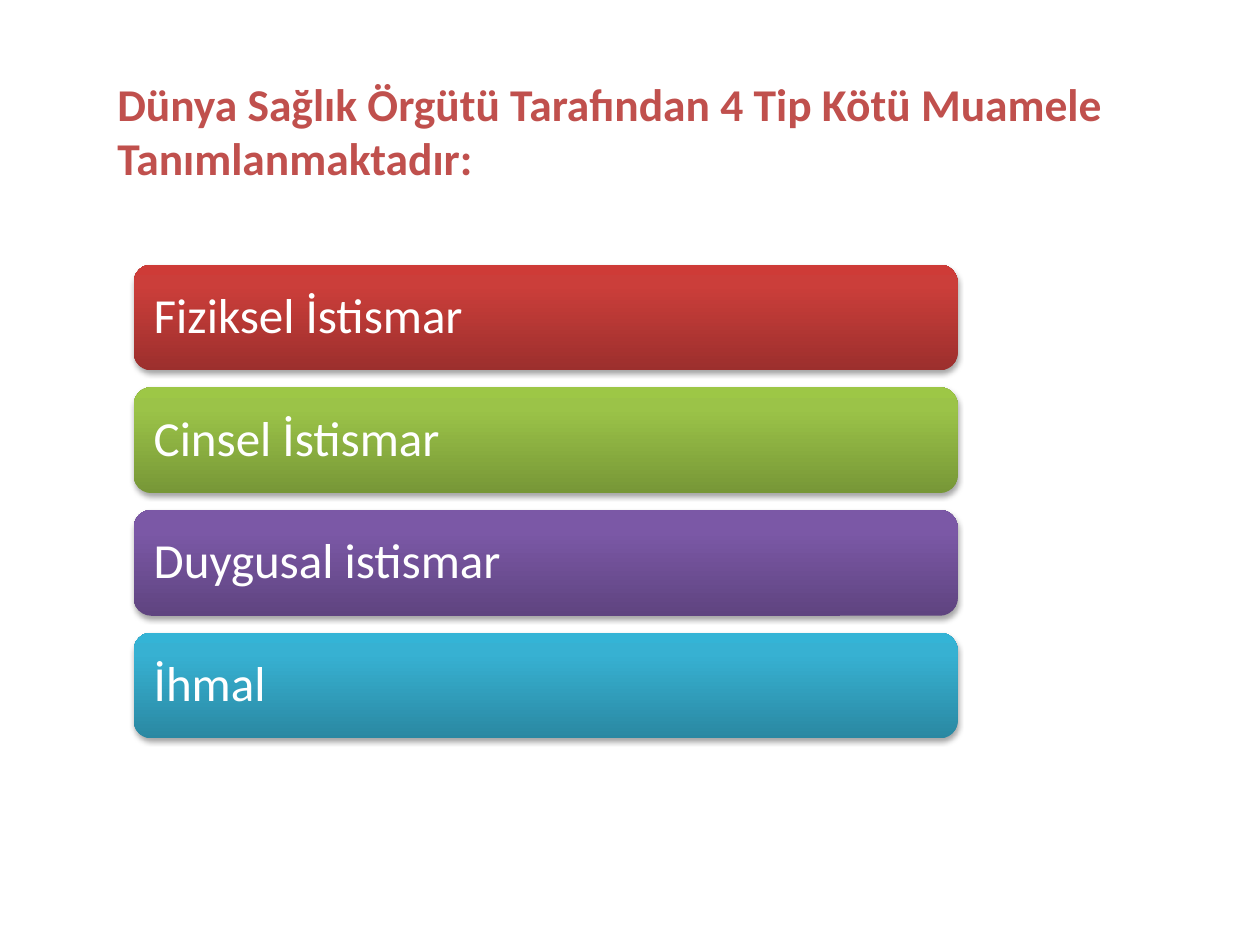
from lxml import etree
from pptx import Presentation
from pptx.dml.color import RGBColor
from pptx.enum.shapes import MSO_SHAPE
from pptx.enum.text import MSO_ANCHOR, PP_ALIGN
from pptx.oxml.ns import qn
from pptx.util import Pt

ROUNDED = MSO_SHAPE.ROUNDED_RECTANGLE
LEFT, MIDDLE = PP_ALIGN.LEFT, MSO_ANCHOR.MIDDLE

# Content: bar label and its gradient from bottom to top
TITLE = "Dünya Sağlık Örgütü Tarafından 4 Tip Kötü Muamele Tanımlanmaktadır:"
TYPES = [
    ("Fiziksel İstismar", ("9C2F2D", "CB3E3A", "CE3B37")),
    ("Cinsel İstismar", ("779737", "9BC348", "9DC746")),
    ("Duygusal istismar", ("5F4480", "7B58A6", "7C57A8")),
    ("İhmal", ("2A88A2", "37B1D2", "34B4D6")),
]

THEME = {
    "font": "Calibri", "title": "C0504D", "label": "FFFFFF", "shadow": "000000",
    "title_size": 26, "label_size": 28, "stops": (0, 80, 100),
}

# Layout in points
TITLE_BOX = (59.8, 43.2, 591.8, 62.6)
BAR_LEFT, BAR_TOP, BAR_W, BAR_H = 76.4, 151.2, 470.8, 60.5
BAR_PITCH, BAR_INSET = 70.1, 8.5


def add_color(parent, color):
    clr = etree.SubElement(parent, qn("a:srgbClr"), val=color)
    return clr


def write(tf, text, size, color, bold=False):
    tf.word_wrap = True
    tf.vertical_anchor = MIDDLE
    p = tf.paragraphs[0]
    p.alignment = LEFT
    r = p.add_run()
    r.text = text
    r.font.name, r.font.size, r.font.bold = THEME["font"], Pt(size), bold
    r.font.color.rgb = RGBColor.from_string(color)
    return p


def fill_gradient(sp, colors):
    sp.fill.gradient()
    sp.fill.gradient_angle = 90
    stops = sp.element.spPr.find(".//" + qn("a:gsLst"))
    stops.clear()
    for pos, color in zip(THEME["stops"], colors):
        add_color(etree.SubElement(stops, qn("a:gs"), pos=str(pos * 1000)), color)


def drop_shadow(sp):
    sp.shadow.inherit = False
    effects = sp.element.spPr.find(qn("a:effectLst"))
    shadow = etree.SubElement(
        effects, qn("a:outerShdw"), blurRad=str(Pt(3.1)), dist=str(Pt(1.8)),
        dir="5400000", rotWithShape="0")
    etree.SubElement(add_color(shadow, THEME["shadow"]), qn("a:alpha"), val="35000")


def add_bar(s, top, label, colors):
    sp = s.shapes.add_shape(ROUNDED, Pt(BAR_LEFT), Pt(top), Pt(BAR_W), Pt(BAR_H))
    fill_gradient(sp, colors)
    sp.line.fill.background()
    drop_shadow(sp)
    tf = sp.text_frame
    tf.margin_left = tf.margin_right = tf.margin_top = tf.margin_bottom = Pt(BAR_INSET)
    p = write(tf, label, THEME["label_size"], THEME["label"])
    p.line_spacing = 0.9


def main():
    prs = Presentation()
    prs.slide_width, prs.slide_height = Pt(720), Pt(540)
    s = prs.slides.add_slide(prs.slide_layouts[5])

    # Title
    title = s.shapes.title
    title.left, title.top, title.width, title.height = map(Pt, TITLE_BOX)
    write(title.text_frame, TITLE, THEME["title_size"], THEME["title"], bold=True)

    # One bar for each type
    for i, (label, colors) in enumerate(TYPES):
        add_bar(s, BAR_TOP + i * BAR_PITCH, label, colors)

    prs.save("out.pptx")


if __name__ == "__main__":
    main()
